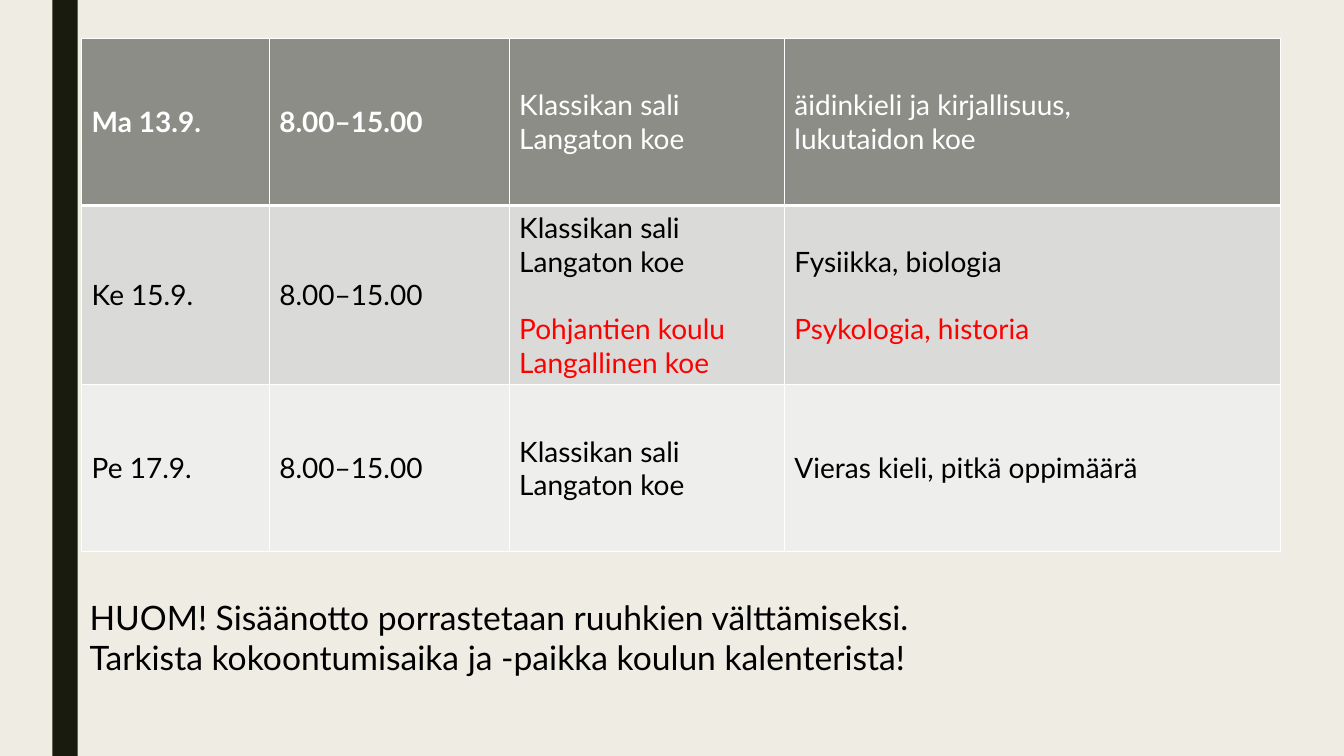
from pptx import Presentation
from pptx.dml.color import RGBColor
from pptx.enum.shapes import MSO_SHAPE
from pptx.enum.text import MSO_ANCHOR, MSO_AUTO_SIZE
from pptx.oxml import parse_xml
from pptx.oxml.ns import nsdecls
from pptx.util import Inches, Pt

BACKGROUND = RGBColor(0xEF, 0xED, 0xE3)
BAR = RGBColor(0x19, 0x1B, 0x0E)
WHITE = RGBColor(0xFF, 0xFF, 0xFF)
BLACK = RGBColor(0, 0, 0)
RED = RGBColor(0xFF, 0, 0)
ROW_FILLS = [RGBColor(0x8C, 0x8D, 0x86), RGBColor(0xDA, 0xDB, 0xD9), RGBColor(0xEE, 0xEE, 0xED)]
FONT = "Lato"
COLUMN_WIDTHS = [1.86, 2.38, 2.73, 4.92]
ROW_HEIGHTS = [1.66, 1.77, 1.66]

TIME = ["8.00–15.00"]
HALL = ["Klassikan sali", "Langaton koe"]
SCHOOL = ["Pohjantien koulu", "Langallinen koe"]
EXAMS = [
    [(["Ma 13.9."], []), (TIME, []), (HALL, []),
     (["äidinkieli ja kirjallisuus,", "lukutaidon koe"], [])],
    [(["Ke 15.9."], []), (TIME, []), (HALL, SCHOOL),
     (["Fysiikka, biologia"], ["Psykologia, historia"])],
    [(["Pe 17.9."], []), (TIME, []), (HALL, []),
     (["Vieras kieli, pitkä oppimäärä"], [])],
]
NOTICE = ["HUOM! Sisäänotto porrastetaan ruuhkien välttämiseksi.",
          "Tarkista kokoontumisaika ja -paikka koulun kalenterista!"]


def write_lines(tf, lines, size):
    tf.text = "\n".join(lines)
    for p in tf.paragraphs:
        p.font.name = FONT
        p.font.size = Pt(size)
        p.font.color.rgb = BLACK


def add_border(cell, side, width):
    cell._tc.get_or_add_tcPr().append(parse_xml(
        f'<a:ln{side} {nsdecls("a")} w="{Pt(width)}"><a:solidFill>'
        f'<a:srgbClr val="{WHITE}"/></a:solidFill></a:ln{side}>'))


prs = Presentation()
prs.slide_width, prs.slide_height = Inches(13.33), Inches(7.5)
s = prs.slides.add_slide(prs.slide_layouts[6])
s.background.fill.solid()
s.background.fill.fore_color.rgb = BACKGROUND

bar = s.shapes.add_shape(MSO_SHAPE.RECTANGLE, Inches(0.52), 0, Inches(0.25), prs.slide_height)
bar.shadow.inherit = False
bar.fill.solid()
bar.fill.fore_color.rgb = BAR
bar.line.fill.background()

table = s.shapes.add_table(
    len(ROW_HEIGHTS), len(COLUMN_WIDTHS), Inches(0.81), Inches(0.38),
    Inches(sum(COLUMN_WIDTHS)), Inches(sum(ROW_HEIGHTS))).table
for column, width in zip(table.columns, COLUMN_WIDTHS):
    column.width = Inches(width)
for row, height in zip(table.rows, ROW_HEIGHTS):
    row.height = Inches(height)

for i, exam in enumerate(EXAMS):
    for j, (lines, red_lines) in enumerate(exam):
        cell = table.cell(i, j)
        cell.vertical_anchor = MSO_ANCHOR.MIDDLE
        for side in "LRTB":
            add_border(cell, side, 3 if (i, side) in [(0, "B"), (1, "T")] else 1)
        cell.fill.solid()
        cell.fill.fore_color.rgb = ROW_FILLS[i]
        write_lines(cell.text_frame, lines + red_lines, 20)
        for k, p in enumerate(cell.text_frame.paragraphs):
            p.font.bold = i == 0 and j < 2
            if i == 0:
                p.font.color.rgb = WHITE
            if k >= len(lines):
                p.font.color.rgb = RED
            if k == len(lines):
                p.space_before = Pt(24)

notice = s.shapes.add_textbox(Inches(0.79), Inches(5.87), Inches(12.02), Inches(0.91))
tf = notice.text_frame
tf.word_wrap = True
tf.auto_size = MSO_AUTO_SIZE.SHAPE_TO_FIT_TEXT
write_lines(tf, NOTICE, 24)

prs.save("out.pptx")
